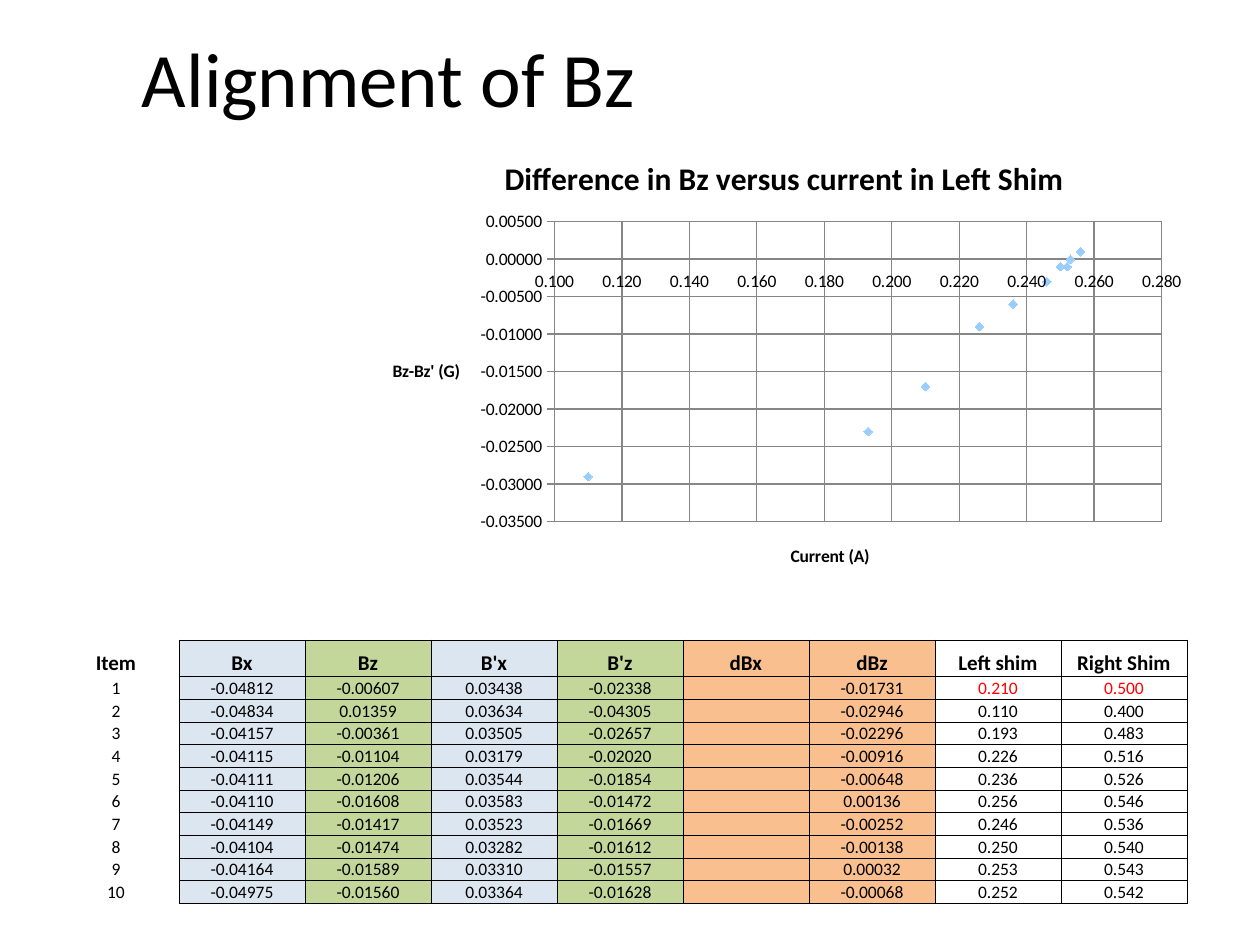
from lxml import etree
from pptx import Presentation
from pptx.chart.data import XyChartData
from pptx.dml.color import RGBColor
from pptx.enum.chart import XL_CHART_TYPE, XL_MARKER_STYLE, XL_TICK_MARK
from pptx.enum.text import MSO_ANCHOR, PP_ALIGN
from pptx.oxml import parse_xml
from pptx.oxml.ns import nsdecls, qn
from pptx.util import Inches, Pt

CENTER = PP_ALIGN.CENTER
MIDDLE, BOTTOM = MSO_ANCHOR.MIDDLE, MSO_ANCHOR.BOTTOM
SCATTER, DIAMOND = XL_CHART_TYPE.XY_SCATTER, XL_MARKER_STYLE.DIAMOND
TICK_OUT, TICK_NONE = XL_TICK_MARK.OUTSIDE, XL_TICK_MARK.NONE
FONT = "Calibri"
NO_STYLE = "{2D5ABB26-0587-4C30-8999-92F81FD0307C}"
CHART_WIDTH, CHART_HEIGHT = 6.58, 3.62
COLORS = {"text": "000000", "alert": "FF0000", "grid": "868686", "point": "99CCFF",
          "x": "DCE6F1", "z": "C4D79B", "difference": "FABF8F"}


def write(frame, text, size=10, bold=False, color="text"):
    paragraph = frame.paragraphs[0]
    paragraph.alignment = CENTER
    if not text:
        # An empty cell still needs a text size, or its row grows
        etree.SubElement(paragraph._p, qn("a:endParaRPr"), sz=str(size * 100))
        return
    run = paragraph.add_run()
    run.text = text
    run.font.name, run.font.size, run.font.bold = FONT, Pt(size), bold
    run.font.color.rgb = RGBColor.from_string(COLORS[color])


def chart_layout(x, y, size=None):
    """Return a manual layout; x, y and size are inches within the chart."""
    target = '<c:layoutTarget val="inner"/>' if size else ""
    extent = (f'<c:w val="{size[0] / CHART_WIDTH}"/><c:h val="{size[1] / CHART_HEIGHT}"/>'
              if size else "")
    return parse_xml(
        f'<c:layout {nsdecls("c")}><c:manualLayout>{target}'
        '<c:xMode val="edge"/><c:yMode val="edge"/>'
        f'<c:x val="{x / CHART_WIDTH}"/><c:y val="{y / CHART_HEIGHT}"/>{extent}'
        '</c:manualLayout></c:layout>')


headers = ["Item", "Bx", "Bz", "B'x", "B'z", "dBx", "dBz", "Left shim", "Right Shim"]
fills = [None, "x", "z", "x", "z", "difference", "difference", None, None]
measurements = [
    ["-0.04812", "-0.00607", "0.03438", "-0.02338", "", "-0.01731", "0.210", "0.500"],
    ["-0.04834", "0.01359", "0.03634", "-0.04305", "", "-0.02946", "0.110", "0.400"],
    ["-0.04157", "-0.00361", "0.03505", "-0.02657", "", "-0.02296", "0.193", "0.483"],
    ["-0.04115", "-0.01104", "0.03179", "-0.02020", "", "-0.00916", "0.226", "0.516"],
    ["-0.04111", "-0.01206", "0.03544", "-0.01854", "", "-0.00648", "0.236", "0.526"],
    ["-0.04110", "-0.01608", "0.03583", "-0.01472", "", "0.00136", "0.256", "0.546"],
    ["-0.04149", "-0.01417", "0.03523", "-0.01669", "", "-0.00252", "0.246", "0.536"],
    ["-0.04104", "-0.01474", "0.03282", "-0.01612", "", "-0.00138", "0.250", "0.540"],
    ["-0.04164", "-0.01589", "0.03310", "-0.01557", "", "0.00032", "0.253", "0.543"],
    ["-0.04975", "-0.01560", "0.03364", "-0.01628", "", "-0.00068", "0.252", "0.542"],
]

prs = Presentation()
prs.slide_width, prs.slide_height = Inches(10), Inches(7.5)
slide = prs.slides.add_slide(prs.slide_layouts[5])

# Heading
heading = slide.shapes.title
heading.left, heading.top = Inches(0.17), Inches(0.17)
heading.width, heading.height = Inches(5.83), Inches(0.87)
heading.text_frame.vertical_anchor = MIDDLE
write(heading.text_frame, "Alignment of Bz", size=44)

# Scatter chart of dBz against the left shim current
chart_data = XyChartData()
differences = chart_data.add_series("Series 1")
for *_, difference, left_shim, right_shim in measurements:
    differences.add_data_point(float(left_shim), round(float(difference), 3))
chart = slide.shapes.add_chart(SCATTER, Inches(2.92), Inches(1.08), Inches(CHART_WIDTH),
                               Inches(CHART_HEIGHT), chart_data).chart
chart.has_legend = False
chart.font.name, chart.font.size = FONT, Pt(10)
chart.font.color.rgb = RGBColor.from_string(COLORS["text"])

current_axis, field_axis = chart.category_axis, chart.value_axis
for title, text, x, y, size in (
        (chart.chart_title, "Difference in Bz versus current in Left Shim", 1.04, 0.12, 18),
        (current_axis.axis_title, "Current (A)", 3.33, 3.22, 10),
        (field_axis.axis_title, "Bz-Bz' (G)", 0.17, 1.75, 10)):
    write(title.text_frame, text, size=size, bold=True)
    body = title.text_frame._txBody.find(qn("a:bodyPr"))
    body.set("rot", "0")
    body.set("vert", "horz")
    for layout in title._element.findall(qn("c:layout")):
        title._element.remove(layout)
    title._element.find(qn("c:tx")).addnext(chart_layout(x, y))

for axis, low, high, step, number_format in (
        (current_axis, 0.1, 0.28, 0.02, "0.000"),
        (field_axis, -0.035, 0.005, 0.005, "0.00000")):
    axis.minimum_scale, axis.maximum_scale, axis.major_unit = low, high, step
    axis.major_tick_mark, axis.minor_tick_mark = TICK_OUT, TICK_NONE
    axis.tick_labels.number_format = number_format
    axis.tick_labels.number_format_is_linked = False
    axis.has_major_gridlines = True
    for line in (axis.format.line, axis.major_gridlines.format.line):
        line.color.rgb = RGBColor.from_string(COLORS["grid"])
        line.width = Pt(0.75)

plot = chart.plots[0]
plot.vary_by_categories = False
points = plot.series[0]
points.smooth = False
points.format.line.fill.background()
points.marker.style, points.marker.size = DIAMOND, 5
points.marker.format.fill.solid()
points.marker.format.fill.fore_color.rgb = RGBColor.from_string(COLORS["point"])
points.marker.format.line.fill.background()

plot_area = chart._chartSpace.chart.plotArea
for layout in plot_area.findall(qn("c:layout")):
    plot_area.remove(layout)
plot_area.insert(0, chart_layout(1.48, 0.68, size=(4.82, 2.38)))

# Table of measurements
rows = [headers] + [[str(i), *row] for i, row in enumerate(measurements, 1)]
table = slide.shapes.add_table(len(rows), len(headers), Inches(0.42), Inches(5.08),
                               Inches(9), Inches(2.1)).table
table.first_row = table.horz_banding = False
table._tbl.tblPr.find(qn("a:tableStyleId")).text = NO_STYLE
for column in table.columns:
    column.width = Inches(1)
for r, row in enumerate(rows):
    table.rows[r].height = Inches(0.18 if r else 0.29)
    for c, text in enumerate(row):
        cell = table.cell(r, c)
        cell.vertical_anchor = BOTTOM
        cell.margin_left = cell.margin_right = cell.margin_top = Inches(0.01)
        cell.margin_bottom = 0
        write(cell.text_frame, text, size=10 if r else 12, bold=r == 0,
              color="alert" if r == 1 and c >= 7 else "text")
        properties = cell._tc.get_or_add_tcPr()
        for side in ("lnL", "lnR", "lnT", "lnB") if c else ("lnR",):
            properties.append(parse_xml(
                f'<a:{side} {nsdecls("a")} w="6350"><a:solidFill>'
                f'<a:srgbClr val="{COLORS["text"]}"/></a:solidFill></a:{side}>'))
        if fills[c]:
            cell.fill.solid()
            cell.fill.fore_color.rgb = RGBColor.from_string(COLORS[fills[c]])
        else:
            cell.fill.background()

prs.save("out.pptx")
